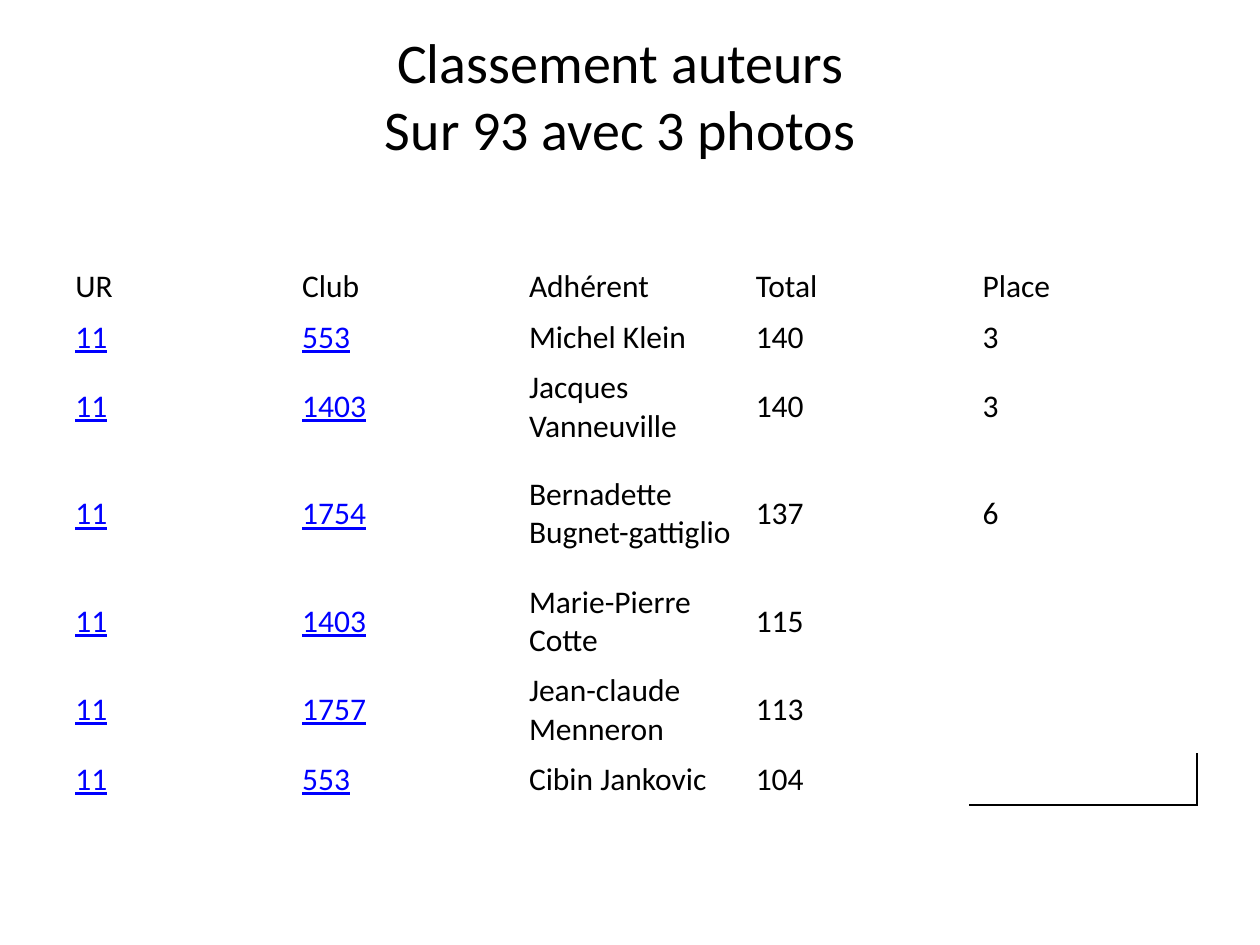
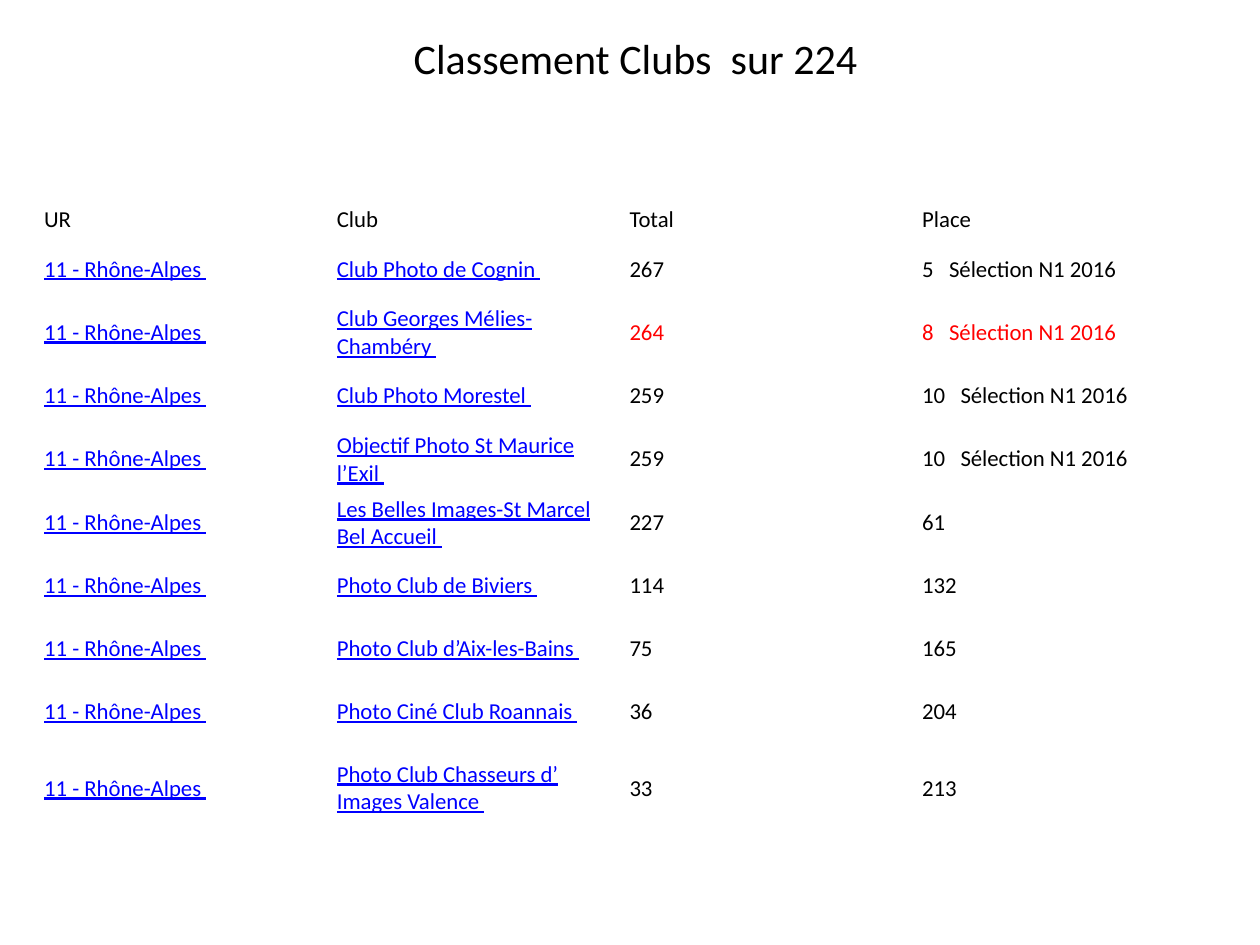
import pptx
import pptx.util
import pptx.dml.color
import pptx.enum.text
import pptx.oxml
import pptx.oxml.ns
from dataclasses import dataclass

Cm, Pt = pptx.util.Cm, pptx.util.Pt


# Theme
@dataclass(frozen=True)
class Theme:
    font: str = "Calibri"
    text: str = "000000"
    link: str = "0000FF"
    highlight: str = "FF0000"
    space_width: float = 0.226  # width of a space, as a share of the type size


THEME = Theme()

# Content: a tuple of parts is set on one line with wide gaps between them
REGION = "11 - Rhône-Alpes"
SELECTION = "Sélection N1 2016"

AUTHORS = {
    "title": ["Classement auteurs", "Sur 93 avec 3 photos"],
    "title_box": (0.71, 0.43, 23.6, 3.0), "title_size": 32, "title_gap": 1,
    "table_at": (1.27, 5.26), "table_width": 22.86, "size": 18, "gap": 1,
    "insets": (0.25, 0.13), "link_tail": "",
    "heights": [1.02, 1.02, 1.77, 2.54, 1.77, 1.77, 1.02],
    "highlight_row": None, "framed_corner": True,
    "rows": [
        ("UR", "Club", "Adhérent", "Total", "Place"),
        ("11", "553", "Michel Klein", "140", "3"),
        ("11", "1403", "Jacques Vanneuville", "140", "3"),
        ("11", "1754", "Bernadette Bugnet-gattiglio", "137", "6"),
        ("11", "1403", "Marie-Pierre Cotte", "115", ""),
        ("11", "1757", "Jean-claude Menneron", "113", ""),
        ("11", "553", "Cibin Jankovic", "104", ""),
    ],
}

CLUBS = {
    "title": [("Classement Clubs", "sur 224")],
    "title_box": (0.71, 0.53, 24.2, 1.27), "title_size": 24, "title_gap": 2,
    "table_at": (0.71, 4.06), "table_width": 23.6, "size": 13, "gap": 3,
    "insets": (0.18, 0.09), "link_tail": " ",
    "heights": [0.71] + [1.27] * 8 + [1.8],
    "highlight_row": 2, "framed_corner": False,
    "rows": [
        ("UR", "Club", "Total", "Place"),
        (REGION, "Club Photo de Cognin", "267", ("5", SELECTION)),
        (REGION, "Club Georges Mélies-Chambéry", "264", ("8", SELECTION)),
        (REGION, "Club Photo Morestel", "259", ("10", SELECTION)),
        (REGION, "Objectif Photo St Maurice l’Exil", "259", ("10", SELECTION)),
        (REGION, "Les Belles Images-St Marcel Bel Accueil", "227", "61"),
        (REGION, "Photo Club de Biviers", "114", "132"),
        (REGION, "Photo Club d’Aix-les-Bains", "75", "165"),
        (REGION, "Photo Ciné Club Roannais", "36", "204"),
        (REGION, "Photo Club Chasseurs d’ Images Valence", "33", "213"),
    ],
}
LINK_COLUMNS = 2


# Text
def add_run(p, text, size, color, underline=False):
    r = p.add_run()
    r.text = text
    r.font.name, r.font.size = THEME.font, Pt(size)
    r.font.underline = underline
    r.font.color.rgb = pptx.dml.color.RGBColor.from_string(color)
    return r


def add_parts(p, parts, size, color, gap, underline=False):
    """Write the parts, parted by one space stretched to the width of `gap` spaces."""
    if isinstance(parts, str):
        parts = (parts,)
    for i, part in enumerate(parts):
        if i:
            r = add_run(p, " ", size, color)
            stretch = (gap - 1) * THEME.space_width * size
            r._r.get_or_add_rPr().set("spc", str(round(stretch * 100)))
        add_run(p, part, size, color, underline)


def add_title(s, spec):
    sp = s.shapes.title
    sp.left, sp.top, sp.width, sp.height = map(Cm, spec["title_box"])
    tf = sp.text_frame
    tf.word_wrap = True
    tf.auto_size = pptx.enum.text.MSO_AUTO_SIZE.SHAPE_TO_FIT_TEXT
    tf.vertical_anchor = pptx.enum.text.MSO_ANCHOR.TOP
    for i, line in enumerate(spec["title"]):
        p = tf.add_paragraph() if i else tf.paragraphs[0]
        p.alignment = pptx.enum.text.PP_ALIGN.CENTER
        add_parts(p, line, spec["title_size"], THEME.text, spec["title_gap"])


# Table
def frame_cell(cell):
    """Draw the right and bottom edges of a cell."""
    tcPr = cell._tc.get_or_add_tcPr()
    for i, edge in enumerate(("lnR", "lnB")):
        tcPr.insert(i, pptx.oxml.parse_xml(
            f'<a:{edge} {pptx.oxml.ns.nsdecls("a")} w="12700"><a:solidFill>'
            f'<a:srgbClr val="{THEME.text}"/></a:solidFill></a:{edge}>'))


def add_ranking(s, spec):
    rows, heights = spec["rows"], spec["heights"]
    n_cols = len(rows[0])
    left, top = spec["table_at"]
    table = s.shapes.add_table(len(rows), n_cols, Cm(left), Cm(top),
                               Cm(spec["table_width"]), Cm(sum(heights))).table
    table.first_row = table.horz_banding = False
    for col in table.columns:
        col.width = Cm(spec["table_width"] / n_cols)
    side, edge = map(Cm, spec["insets"])
    for i, (row, height) in enumerate(zip(rows, heights)):
        table.rows[i].height = Cm(height)
        for j, value in enumerate(row):
            cell = table.cell(i, j)
            cell.fill.background()
            cell.vertical_anchor = pptx.enum.text.MSO_ANCHOR.MIDDLE
            cell.margin_left = cell.margin_right = side
            cell.margin_top = cell.margin_bottom = edge
            is_link = i > 0 and j < LINK_COLUMNS
            color = THEME.highlight if i == spec["highlight_row"] else THEME.text
            if is_link:
                color, value = THEME.link, value + spec["link_tail"]
            if value:
                add_parts(cell.text_frame.paragraphs[0], value, spec["size"],
                          color, spec["gap"], is_link)
    if spec["framed_corner"]:
        frame_cell(table.cell(len(rows) - 1, n_cols - 1))


# Slides
def main():
    prs = pptx.Presentation()
    prs.slide_width, prs.slide_height = Cm(25.4), Cm(19.05)
    for spec in (AUTHORS, CLUBS):
        s = prs.slides.add_slide(prs.slide_layouts.get_by_name("Title Only"))
        add_title(s, spec)
        add_ranking(s, spec)
    prs.save("out.pptx")


if __name__ == "__main__":
    main()
